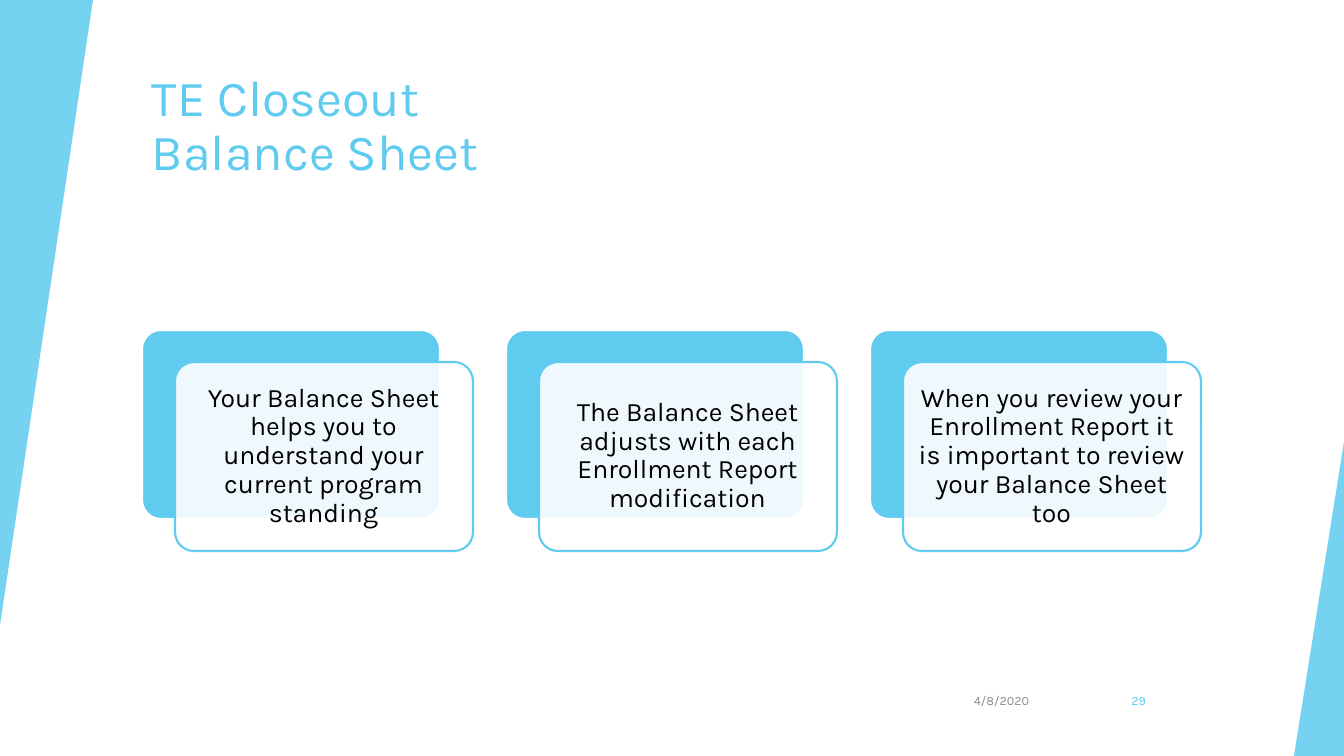
"""Build the TE Closeout Balance Sheet slide."""
from pptx import Presentation, util as u
from pptx.dml.color import RGBColor
from pptx.enum import shapes, text
from pptx.oxml.ns import qn
from lxml import etree

PX = 914400 / 100.8
SKY = RGBColor(0x5F, 0xCB, 0xEF)
WHITE = RGBColor(0xFF, 0xFF, 0xFF)
BLACK = RGBColor(0, 0, 0)
GRAY = RGBColor(0x8C, 0x8C, 0x8C)
KIND = shapes.MSO_SHAPE
ALIGN = text.PP_ALIGN
ANCHOR = text.MSO_ANCHOR


def add_panel(kind, box, fill=None, alpha=100, line=None, adjust=None):
    panel = slide.shapes.add_shape(kind, *[round(v * PX) for v in box])
    panel.shadow.inherit = False
    if adjust is not None:
        panel.adjustments[0] = adjust
    if fill is None:
        panel.fill.background()
    else:
        panel.fill.solid()
        panel.fill.fore_color.rgb = fill
        if alpha < 100:
            color = panel.fill._xPr.find(qn("a:solidFill"))[0]
            etree.SubElement(color, qn("a:alpha"), val=str(alpha * 1000))
    if line is None:
        panel.line.fill.background()
    else:
        panel.line.color.rgb = line
        panel.line.width = u.Pt(1.5)
    return panel


def write(words, box, size, color, align=ALIGN.LEFT, anchor=ANCHOR.MIDDLE,
          spacing=1.0, after=0, inset=None, holder=None):
    if holder is None:
        holder = slide.shapes.add_textbox(*[round(v * PX) for v in box])
    frame = holder.text_frame
    frame.word_wrap = True
    frame.vertical_anchor = anchor
    if inset is not None:
        frame.margin_left = frame.margin_right = round(inset * PX)
        frame.margin_top = frame.margin_bottom = round(inset * PX)
    frame.text = words
    paragraph = frame.paragraphs[0]
    paragraph.alignment = align
    paragraph.line_spacing = spacing
    paragraph.space_after = u.Pt(after)
    for run in paragraph.runs:
        run.font.name = "Karla"
        run.font.size = u.Pt(size)
        run.font.color.rgb = color


deck = Presentation()
deck.slide_width = round(1344 * PX)
deck.slide_height = round(756 * PX)
slide = deck.slides.add_slide(deck.slide_layouts[6])

write("TE Closeout\vBalance Sheet", (142, 68, 1124, 121), 36, SKY,
      anchor=ANCHOR.TOP, spacing=0.9)

left_wedge = add_panel(KIND.ISOSCELES_TRIANGLE, (0, 0, 93, 625), SKY, 85, adjust=1)
left_wedge.rotation = 180
add_panel(KIND.ISOSCELES_TRIANGLE, (1294, 442, 50, 314), SKY, 85, adjust=1)

write("4/8/2020", (938, 681, 101, 40), 9, GRAY, align=ALIGN.RIGHT, after=6)
page_badge = add_panel(KIND.OVAL, (1091, 681, 76, 40))
write("29", None, 9, SKY, align=ALIGN.RIGHT, after=6, holder=page_badge)

messages = [
    "Your Balance Sheet helps you to understand your current program standing",
    "The Balance Sheet adjusts with each Enrollment Report modification",
    "When you review your Enrollment Report it is important to review your Balance Sheet too",
]
CARD_LEFT, CARD_TOP, CARD_W, CARD_H = 142, 330, 298, 189
CARD_PITCH, OFFSET = 364, 33
for i, message in enumerate(messages):
    x = CARD_LEFT + i * CARD_PITCH
    add_panel(KIND.ROUNDED_RECTANGLE, (x, CARD_TOP, CARD_W, CARD_H),
              SKY, line=WHITE, adjust=0.1)
    front_x, front_y = x + OFFSET, CARD_TOP + OFFSET - 1
    add_panel(KIND.ROUNDED_RECTANGLE, (front_x, front_y, CARD_W, CARD_H),
              WHITE, 90, line=SKY, adjust=0.1)
    write(message, (front_x + 5, front_y + 5, CARD_W - 11, CARD_H - 11), 19, BLACK,
          align=ALIGN.CENTER, spacing=0.9, inset=8)

deck.save("out.pptx")
